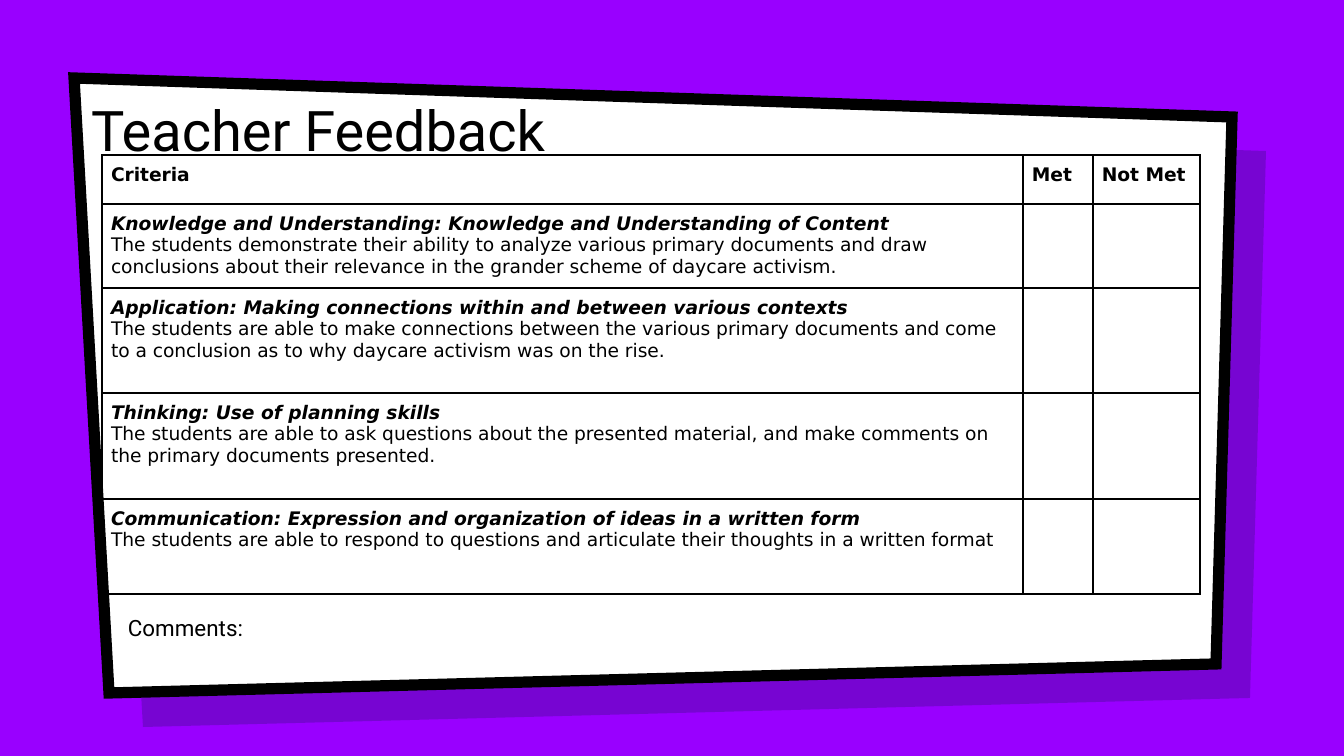
"""Build the teacher feedback slide with its criteria table."""
import pptx
import pptx.dml.color
import pptx.enum.text
import pptx.oxml
import pptx.oxml.ns
import pptx.util
from lxml import etree

PX = 914400 / 134.4
PURPLE = pptx.dml.color.RGBColor(0x99, 0x00, 0xFF)
NAVY = pptx.dml.color.RGBColor(0x00, 0x19, 0x36)
BLACK = pptx.dml.color.RGBColor(0x00, 0x00, 0x00)
WHITE = pptx.dml.color.RGBColor(0xFF, 0xFF, 0xFF)

FRAME = [(74, 78), (1232, 117), (1216, 664), (109, 693)]
SHADOW_OFFSET = 34
COLUMN_WIDTHS = [921, 70, 107]
ROW_HEIGHTS = [49, 84, 105, 106, 95]
HEADINGS = ["Criteria", "Met", "Not Met"]
CRITERIA = [
    ("Knowledge and Understanding: Knowledge and Understanding of Content",
     "The students demonstrate their ability to analyze various primary documents and draw "
     "conclusions about their relevance in the grander scheme of daycare activism."),
    ("Application: Making connections within and between various contexts",
     "The students are able to make connections between the various primary documents and come "
     "to a conclusion as to why daycare activism was on the rise."),
    ("Thinking: Use of planning skills",
     "The students are able to ask questions about the presented material, and make comments on "
     "the primary documents presented."),
    ("Communication: Expression and organization of ideas in a written form",
     "The students are able to respond to questions and articulate their thoughts in a written "
     "format"),
]
TITLE_FONT = {"name": "Roboto", "size": pptx.util.Pt(30), "bold": False}
COMMENT_FONT = {"name": "Roboto", "size": pptx.util.Pt(12)}
BODY_FONT = {"name": "DejaVu Sans", "size": pptx.util.Pt(10), "bold": False}
HEADING_FONT = BODY_FONT | {"bold": True}
CRITERION_FONT = HEADING_FONT | {"italic": True}


def px(length):
    """Turn pixels into EMU."""
    return pptx.util.Emu(round(length * PX))


def set_values(target, values):
    """Set each named attribute of the target."""
    for name, value in values.items():
        setattr(target, name, value)


def write(paragraph, text, font):
    """Add a black run in the given font."""
    run = paragraph.add_run()
    run.text = text
    set_values(run.font, font)
    run.font.color.rgb = BLACK


def add_panel(slide, points, color):
    """Draw a closed flat panel through the points."""
    builder = slide.shapes.build_freeform(*points[0], scale=PX)
    builder.add_line_segments(points[1:], close=True)
    panel = builder.convert_to_shape()
    panel.shadow.inherit = False
    panel.fill.solid()
    panel.fill.fore_color.rgb = color
    return panel


def add_frame(slide):
    """Draw the slanted frame over its translucent shadow."""
    shifted = [(x + SHADOW_OFFSET, y + SHADOW_OFFSET) for x, y in FRAME]
    shade = add_panel(slide, shifted, NAVY)
    shade.line.fill.background()
    color = shade._element.spPr.find(".//" + pptx.oxml.ns.qn("a:srgbClr"))
    etree.SubElement(color, pptx.oxml.ns.qn("a:alpha"), val="22000")

    frame = add_panel(slide, FRAME, WHITE)
    frame.line.color.rgb = BLACK
    frame.line.width = pptx.util.Pt(6)
    outline = frame.line._get_or_add_ln()
    etree.SubElement(outline, pptx.oxml.ns.qn("a:miter"), lim="800000")


def add_title(slide):
    """Place the title in front of the frame."""
    title = slide.shapes.title
    slide.shapes._spTree.append(title._element)
    set_values(title, {"left": px(78), "top": px(65), "width": px(614), "height": px(111)})
    set_values(title.text_frame, {
        "auto_size": pptx.enum.text.MSO_AUTO_SIZE.NONE,
        "vertical_anchor": pptx.enum.text.MSO_ANCHOR.BOTTOM,
        "margin_left": px(13), "margin_right": px(13),
        "margin_top": px(13), "margin_bottom": px(13)})
    paragraph = title.text_frame.paragraphs[0]
    paragraph.alignment = pptx.enum.text.PP_ALIGN.LEFT
    write(paragraph, "Teacher Feedback", TITLE_FONT)


def format_cell(cell):
    """Clear the cell's fill and rule all of its sides."""
    margins = ("margin_left", "margin_right", "margin_top", "margin_bottom")
    set_values(cell, dict.fromkeys(margins, px(9)))
    properties = cell._tc.get_or_add_tcPr()
    for side in ("lnL", "lnR", "lnT", "lnB"):
        properties.append(pptx.oxml.parse_xml(
            f'<a:{side} {pptx.oxml.ns.nsdecls("a")} w="12700"><a:solidFill>'
            f'<a:srgbClr val="{BLACK}"/></a:solidFill></a:{side}>'))
    cell.fill.background()


def add_criteria(slide):
    """Add the table of criteria with blank marking columns."""
    table = slide.shapes.add_table(
        len(ROW_HEIGHTS), len(COLUMN_WIDTHS), px(102), px(155),
        px(sum(COLUMN_WIDTHS)), px(sum(ROW_HEIGHTS))).table
    set_values(table, {"first_row": False, "horz_banding": False})
    for column, width in zip(table.columns, COLUMN_WIDTHS):
        column.width = px(width)
    for row, height in zip(table.rows, ROW_HEIGHTS):
        row.height = px(height)
    for cell in table.iter_cells():
        format_cell(cell)
    for cell, heading in zip(table.rows[0].cells, HEADINGS):
        write(cell.text_frame.paragraphs[0], heading, HEADING_FONT)
    for row, (criterion, description) in enumerate(CRITERIA, start=1):
        text = table.cell(row, 0).text_frame
        write(text.paragraphs[0], criterion, CRITERION_FONT)
        write(text.add_paragraph(), description, BODY_FONT)


def add_comments(slide):
    """Add the space for comments under the table."""
    comments = slide.shapes.add_textbox(px(48), px(597), px(1121), px(150)).text_frame
    set_values(comments, {
        "word_wrap": True, "margin_left": px(13), "margin_right": px(13),
        "margin_top": px(13), "margin_bottom": px(13)})
    paragraph = comments.paragraphs[0]
    paragraph.line_spacing = 1.15
    set_indent = paragraph._p.get_or_add_pPr().set
    set_indent("marL", str(px(67)))
    set_indent("indent", "0")
    write(paragraph, "Comments:", COMMENT_FONT)


def main():
    """Build and save the slide."""
    deck = pptx.Presentation()
    set_values(deck, {"slide_width": px(1344), "slide_height": px(756)})
    slide = deck.slides.add_slide(deck.slide_layouts.get_by_name("Title Only"))
    slide.background.fill.solid()
    slide.background.fill.fore_color.rgb = PURPLE
    add_frame(slide)
    add_title(slide)
    add_criteria(slide)
    add_comments(slide)
    deck.save("out.pptx")


if __name__ == "__main__":
    main()
